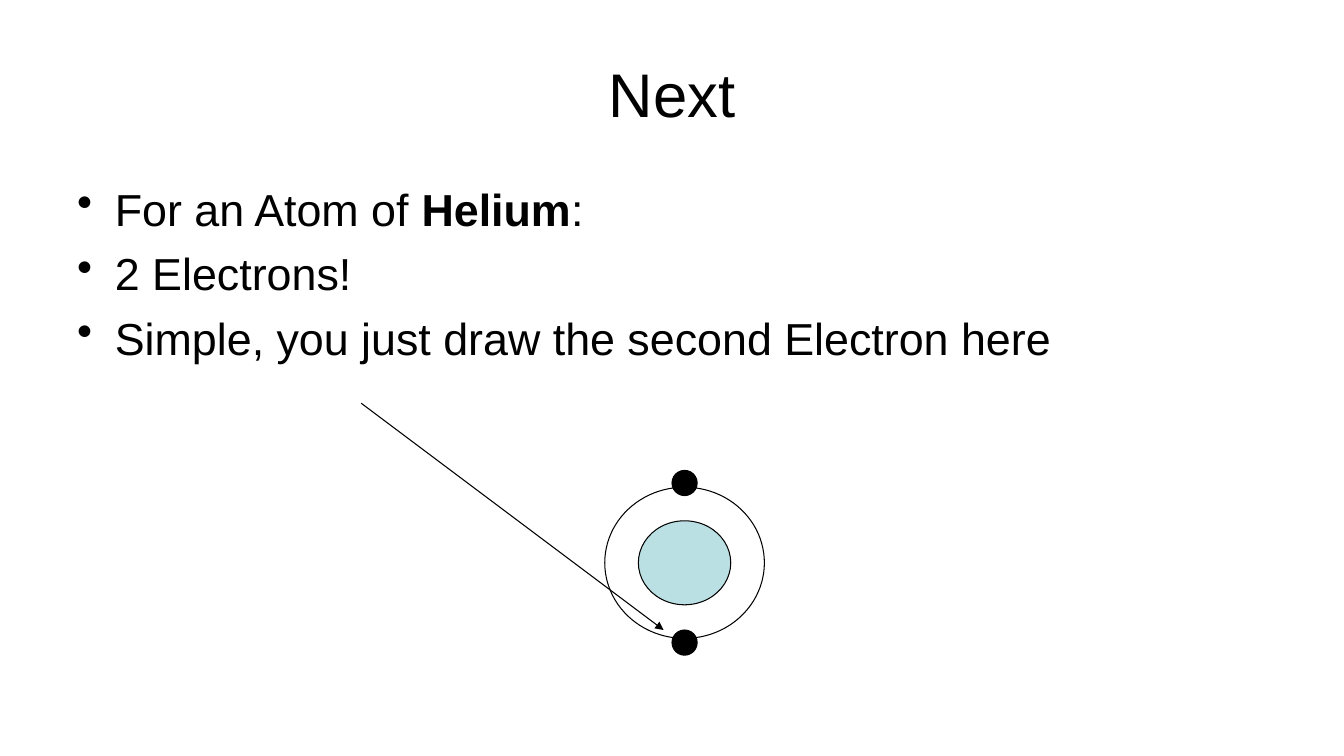
from lxml import etree
from pptx import Presentation
from pptx.dml.color import RGBColor
from pptx.enum.shapes import MSO_CONNECTOR, MSO_SHAPE
from pptx.enum.text import MSO_ANCHOR, PP_ALIGN
from pptx.oxml.ns import qn
from pptx.util import Pt

BLACK = RGBColor(0x00, 0x00, 0x00)
PALE_TEAL = RGBColor(0xBB, 0xE0, 0xE3)
ELLIPSE = MSO_SHAPE.OVAL
STRAIGHT = MSO_CONNECTOR.STRAIGHT
TOP, MIDDLE = MSO_ANCHOR.TOP, MSO_ANCHOR.MIDDLE
LEFT, CENTER = PP_ALIGN.LEFT, PP_ALIGN.CENTER


class SlideBuilder:
    font_name = "Arial"
    line_width = 0.75
    bullet_indent = 27
    bullet_space = 7.68

    def __init__(self, slide):
        self.slide = slide

    def text(self, box, paragraphs, size, align=LEFT, anchor=TOP, bullets=False):
        """Each paragraph is a list of (text, bold) runs."""
        shape = self.slide.shapes.add_textbox(*map(Pt, box))
        frame = shape.text_frame
        frame.word_wrap = True
        frame.vertical_anchor = anchor
        for index, runs in enumerate(paragraphs):
            paragraph = frame.add_paragraph() if index else frame.paragraphs[0]
            paragraph.alignment = align
            paragraph.font.name = self.font_name
            paragraph.font.size = Pt(size)
            paragraph.font.color.rgb = BLACK
            for text, bold in runs:
                run = paragraph.add_run()
                run.text = text
                if bold:
                    run.font.bold = True
            if bullets:
                self.bullet(paragraph)

    def bullet(self, paragraph):
        paragraph.space_before = Pt(self.bullet_space)
        properties = paragraph._p.get_or_add_pPr()
        properties.set("marL", str(Pt(self.bullet_indent)))
        properties.set("indent", str(-Pt(self.bullet_indent)))
        character = etree.Element(qn("a:buChar"), char="•")
        properties.find(qn("a:defRPr")).addprevious(character)

    def ellipse(self, center_x, center_y, width, height, fill=None):
        shape = self.slide.shapes.add_shape(
            ELLIPSE, Pt(center_x - width / 2), Pt(center_y - height / 2), Pt(width), Pt(height))
        shape.shadow.inherit = False
        if fill is None:
            shape.fill.background()
        else:
            shape.fill.solid()
            shape.fill.fore_color.rgb = fill
        self.outline(shape.line)

    def arrow(self, start, end):
        connector = self.slide.shapes.add_connector(STRAIGHT, *map(Pt, start + end))
        self.outline(connector.line)
        etree.SubElement(connector.line._get_or_add_ln(), qn("a:tailEnd"), type="triangle")
        etree.SubElement(connector._element.spPr, qn("a:effectLst"))

    def outline(self, line):
        line.color.rgb = BLACK
        line.width = Pt(self.line_width)


def main():
    presentation = Presentation()
    presentation.slide_width, presentation.slide_height = Pt(960), Pt(540)
    blank_layout = presentation.slide_layouts[6]
    builder = SlideBuilder(presentation.slides.add_slide(blank_layout))

    builder.text((48, 21.6, 864, 90), [[("Next", False)]], 44, CENTER, MIDDLE)
    builder.text((48, 126, 864, 356.4), [
        [("For an Atom of ", False), ("Helium", True), (":", False)],
        [("2 Electrons!", False)],
        [("Simple, you just draw the second Electron here", False)],
    ], 32, bullets=True)

    atom_x, atom_y = 489, 402
    electron_size, electron_distance = 18, 57
    builder.ellipse(atom_x, atom_y, 66, 60, PALE_TEAL)
    builder.ellipse(atom_x, atom_y, 114, 108)
    for side in (-1, 1):
        builder.ellipse(atom_x, atom_y + side * electron_distance,
                        electron_size, electron_size, BLACK)
    builder.arrow((258, 288), (474, 450))

    presentation.save("out.pptx")


if __name__ == "__main__":
    main()
